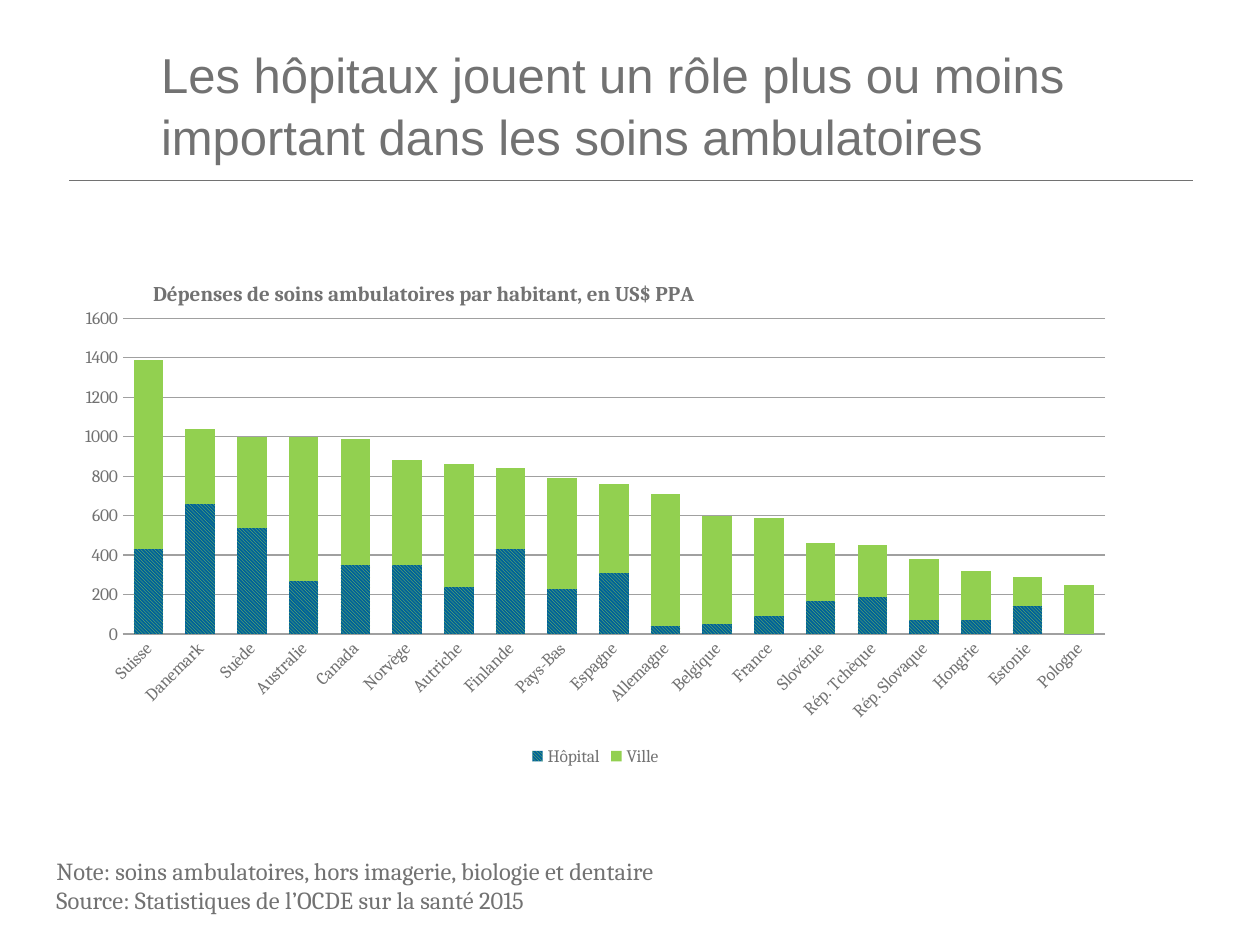
from dataclasses import dataclass

from lxml import etree
from pptx import Presentation
from pptx.chart.data import CategoryChartData
from pptx.dml.color import RGBColor
from pptx.enum.chart import XL_CHART_TYPE as ChartType, XL_LEGEND_POSITION as LegendPos
from pptx.enum.chart import XL_TICK_MARK as Tick
from pptx.enum.dml import MSO_PATTERN as Pattern
from pptx.enum.shapes import MSO_CONNECTOR as Connector
from pptx.enum.text import MSO_ANCHOR as Anchor
from pptx.oxml import parse_xml
from pptx.oxml.ns import nsdecls, qn
from pptx.util import Inches, Pt

W, H = 10, 7.5
GREY, GREEN, BLUE, GRID = "727272", "92D050", "006299", "A0A0A0"
LAYOUT = {"title": (0.08, 0.06), "plot": (0.055, 0.14, 0.925, 0.6)}


@dataclass
class Box:
    """A frame given as shares of the slide's width and height."""
    x: float
    y: float
    w: float
    h: float

    def emu(self) -> tuple:
        return (Inches(self.x * W), Inches(self.y * H),
                Inches(self.w * W), Inches(self.h * H))


@dataclass
class Block:
    box: Box
    lines: list
    font: dict
    anchor: Anchor
    spacing: float = 1.0


@dataclass
class Spending:
    country: str
    hospital: int
    town: int


BLOCKS = [
    Block(Box(0.118, 0.035, 0.811, 0.149),
          ["Les hôpitaux jouent un rôle plus ou moins important dans les soins ambulatoires"],
          {"name": "Arial", "size": Pt(28)}, Anchor.MIDDLE, 1.05),
    Block(Box(0.035, 0.899, 0.764, 0.076),
          ["Note: soins ambulatoires, hors imagerie, biologie et dentaire",
           "Source: Statistiques de l’OCDE sur la santé 2015"],
          {"name": "Cambria", "size": Pt(14)}, Anchor.TOP),
]

SPENDING = [Spending(*row) for row in [
    ("Suisse", 430, 960), ("Danemark", 660, 380), ("Suède", 540, 460),
    ("Australie", 270, 730), ("Canada", 350, 640), ("Norvège", 350, 530),
    ("Autriche", 240, 620), ("Finlande", 430, 410), ("Pays-Bas", 230, 560),
    ("Espagne", 310, 450), ("Allemagne", 40, 670), ("Belgique", 50, 550),
    ("France", 90, 500), ("Slovénie", 170, 290), ("Rép. Tchèque", 190, 260),
    ("Rép. Slovaque", 70, 310), ("Hongrie", 70, 250), ("Estonie", 140, 150),
    ("Pologne", 0, 250),
]]


def color(value: str) -> RGBColor:
    return RGBColor.from_string(value)


def set_font(font, **values) -> None:
    for key, value in values.items():
        setattr(font, key, value)
    font.color.rgb = color(GREY)


def add_block(s, block: Block) -> None:
    tf = s.shapes.add_textbox(*block.box.emu()).text_frame
    tf.word_wrap = True
    tf.vertical_anchor = block.anchor
    for i, line in enumerate(block.lines):
        p = tf.add_paragraph() if i else tf.paragraphs[0]
        p.line_spacing = block.spacing
        r = p.add_run()
        r.text = line
        set_font(r.font, **block.font)


def add_rule(s, x1: float, x2: float, y: float) -> None:
    sp = s.shapes.add_connector(Connector.STRAIGHT, Inches(x1 * W), Inches(y * H),
                                Inches(x2 * W), Inches(y * H))
    sp.line.width = Pt(0.5)
    sp.line.color.rgb = color(GREY)
    etree.SubElement(sp._element.spPr, qn("a:effectLst"))


def place(element, shares: tuple, inner: bool = False) -> None:
    """Fix the position of a chart part as shares of the chart's size."""
    for old in element.findall(qn("c:layout")):
        element.remove(old)
    target = '<c:layoutTarget val="inner"/>' if inner else ""
    names = ("x", "y", "w", "h")[:len(shares)]
    modes = "".join(f'<c:{n}Mode val="edge"/>' for n in names if n in "xy")
    values = "".join(f'<c:{n} val="{v}"/>' for n, v in zip(names, shares))
    layout = parse_xml(f'<c:layout {nsdecls("c")}><c:manualLayout>{target}{modes}{values}'
                       '</c:manualLayout></c:layout>')
    tx = element.find(qn("c:tx"))
    element.insert(0 if tx is None else 1, layout)


def add_spending_chart(s, box: Box) -> None:
    data = CategoryChartData(number_format="0")
    data.categories = [row.country for row in SPENDING]
    data.add_series("Hôpital", [row.hospital for row in SPENDING])
    data.add_series("Ville", [row.town for row in SPENDING])
    chart = s.shapes.add_chart(ChartType.COLUMN_STACKED, *box.emu(), data).chart
    set_font(chart.font, name="Cambria", size=Pt(10))

    # Title and legend
    chart.has_title = True
    p = chart.chart_title.text_frame.paragraphs[0]
    r = p.add_run()
    r.text = "Dépenses de soins ambulatoires par habitant, en US$ PPA"
    set_font(r.font, name="Cambria", size=Pt(12), bold=True)
    chart.chart_title.include_in_layout = False
    chart.has_legend = True
    chart.legend.position = LegendPos.BOTTOM
    chart.legend.include_in_layout = False

    # Axes
    cat, val = chart.category_axis, chart.value_axis
    for axis in (cat, val):
        axis.major_tick_mark = axis.minor_tick_mark = Tick.NONE
    cat.format.line.color.rgb = color(GRID)
    cat.tick_labels.font.size = Pt(10)
    cat._element.txPr.find(qn("a:bodyPr")).set("rot", "-2700000")
    val.minimum_scale, val.maximum_scale, val.major_unit = 0, 1600, 200
    val.tick_labels.number_format = "0"
    val.tick_labels.number_format_is_linked = False
    val.format.line.fill.background()
    val.major_gridlines.format.line.width = Pt(0.75)
    val.major_gridlines.format.line.color.rgb = color(GRID)

    # Columns
    plot = chart.plots[0]
    plot.gap_width, plot.overlap, plot.vary_by_categories = 75, 100, False
    hospital, town = (series.format.fill for series in plot.series)
    hospital.patterned()
    hospital.pattern = Pattern.DARK_DOWNWARD_DIAGONAL
    hospital.fore_color.rgb = color(GREEN)
    hospital.back_color.rgb = color(BLUE)
    town.solid()
    town.fore_color.rgb = color(GREEN)

    place(chart.chart_title._element, LAYOUT["title"])
    place(chart._chartSpace.chart.plotArea, LAYOUT["plot"], inner=True)


def main() -> None:
    prs = Presentation()
    prs.slide_width, prs.slide_height = Inches(W), Inches(H)
    s = prs.slides.add_slide(prs.slide_layouts[6])
    add_rule(s, 0.055, 0.947, 0.191)
    add_spending_chart(s, Box(0.051, 0.259, 0.843, 0.557))
    for block in BLOCKS:
        add_block(s, block)
    prs.save("out.pptx")


if __name__ == "__main__":
    main()
